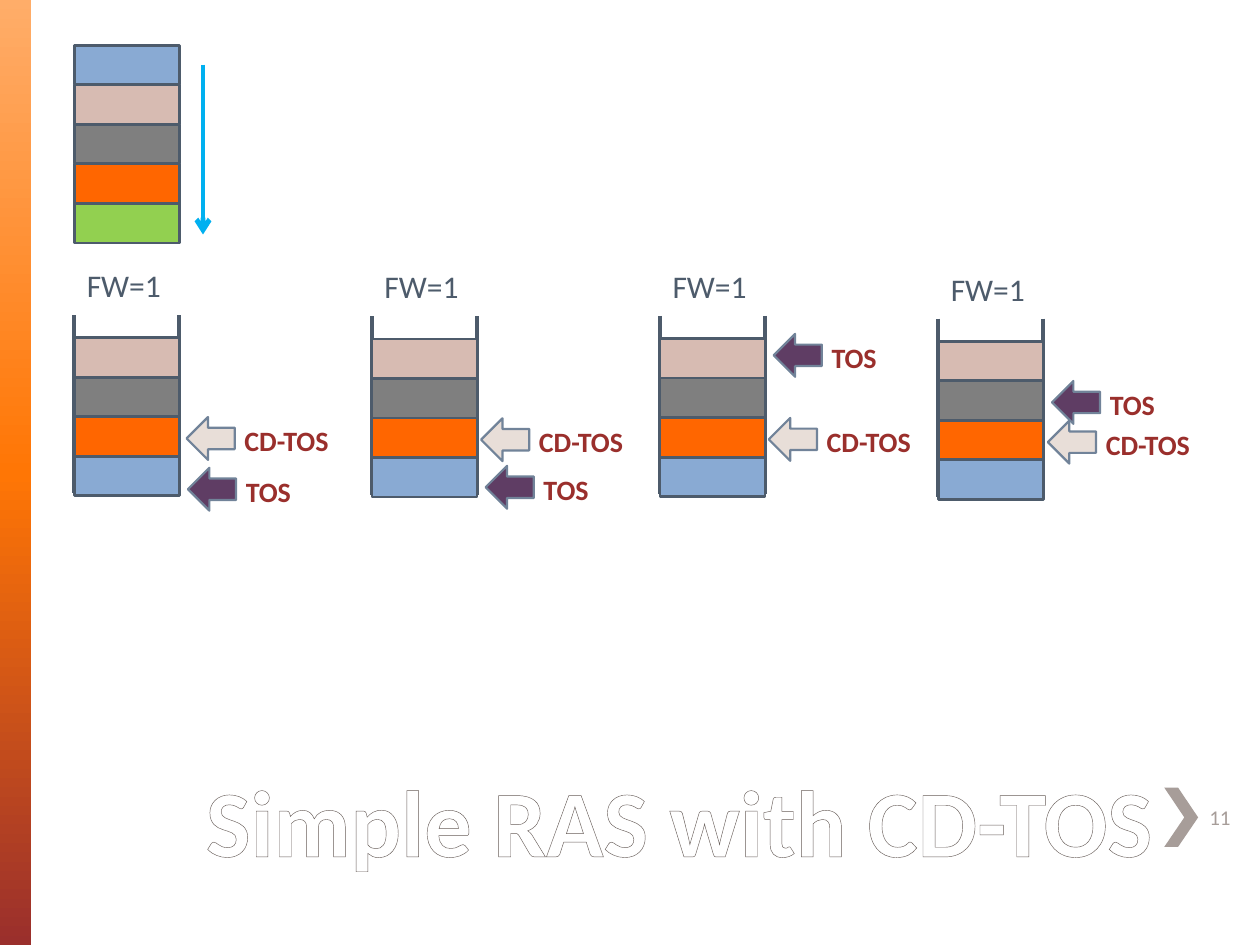
from lxml import etree
from pptx import Presentation
from pptx import util as u
from pptx.dml.color import RGBColor
from pptx.enum import shapes, text
from pptx.oxml.ns import qn

Pt = u.Pt
HUE = {
    "blue": "89AAD3", "pink": "D7BBB2", "gray": "7F7F7F", "orange": "FF6600",
    "green": "92D050", "edge": "4D5B6B", "plum": "5F3D64", "sand": "E8DED8",
    "rim": "718399", "red": "9A2F2C", "sky": "00B0F0", "taupe": "A79D99",
    "white": "FFFFFF", "trim": "675D59",
}
KIND = shapes.MSO_SHAPE
WIDE, HIGH, STEP = 60, 22.5, 22.6

deck = Presentation()
deck.slide_width, deck.slide_height = Pt(720), Pt(540)
slide = deck.slides.add_slide(deck.slide_layouts[6])
parts = slide.shapes


def write(words, x, y, w, h, size=16, hue="red", bold=False, wrap=False,
          align=text.PP_ALIGN.LEFT, anchor=text.MSO_ANCHOR.TOP):
    """Add a text box and return its run."""
    frame = parts.add_textbox(Pt(x), Pt(y), Pt(w), Pt(h)).text_frame
    frame.word_wrap, frame.vertical_anchor = wrap, anchor
    para = frame.paragraphs[0]
    para.alignment = align
    run = para.add_run()
    run.text = words
    run.font.name, run.font.size, run.font.bold = "Calibri", Pt(size), bold
    run.font.color.rgb = RGBColor.from_string(HUE[hue])
    return run


def paint(item, line, width, fill=None):
    """Colour a shape or line and take its shadow off."""
    if fill:
        item.fill.solid()
        item.fill.fore_color.rgb = RGBColor.from_string(HUE[fill])
    item.line.color.rgb = RGBColor.from_string(HUE[line])
    item.line.width = Pt(width)
    etree.SubElement(item._element.spPr, qn("a:effectLst"))


# Side bar
bar = parts.add_shape(KIND.RECTANGLE, 0, 0, Pt(18), Pt(540))
bar.shadow.inherit = False
bar.line.fill.background()
bar.fill.gradient()
bar.fill.gradient_angle = 270
stops = bar._element.spPr.find(".//" + qn("a:gsLst"))
for stop in list(stops):
    stops.remove(stop)
for place, shade in ((0, "FFAD69"), (50, "FF7605"), (100, "9A2F2C")):
    stop = etree.SubElement(stops, qn("a:gs"), pos=str(place * 1000))
    etree.SubElement(stop, qn("a:srgbClr"), val=shade)

# Chevron beside the title
pen = parts.build_freeform(Pt(673.2), Pt(450), scale=1.0)
pen.add_line_segments([(Pt(x), Pt(y)) for x, y in (
    (665.3, 450), (676.8, 467.1), (665.3, 484), (673.2, 484), (684.7, 467.1))])
mark = pen.convert_to_shape()
mark.shadow.inherit = False
mark.fill.solid()
mark.fill.fore_color.rgb = RGBColor.from_string(HUE["taupe"])
mark.line.fill.background()

# Call order
for row, hue in enumerate(("blue", "pink", "gray", "orange", "green")):
    cell = parts.add_shape(KIND.RECTANGLE, Pt(42.5), Pt(25.9 + row * STEP),
                           Pt(WIDE), Pt(HIGH))
    paint(cell, "edge", 1.5, hue)
flow = parts.add_connector(shapes.MSO_CONNECTOR.STRAIGHT,
                           Pt(116), Pt(37), Pt(116), Pt(134))
paint(flow, "sky", 2.75)
etree.SubElement(flow.line._get_or_add_ln(), qn("a:tailEnd"), type="arrow")

# Stacks: left, top of first cell, TOS arrow top, CD-TOS arrow offset
for left, top, tos, gap in ((42.5, 193, 267.3, 64.1), (212.6, 193.7, 266.2, 62.3),
                            (377.2, 193.5, 190.8, 62.1), (536.2, 195.1, 217.7, 62.6)):
    write("FW=1", left, top - 44.4, 71, 29, size=18, hue="edge", wrap=True)
    for side in (left, left + WIDE):
        wall = parts.add_connector(shapes.MSO_CONNECTOR.STRAIGHT, Pt(side),
                                   Pt(top - 13), Pt(side), Pt(top + 89))
        paint(wall, "edge", 2.25)
    for row, hue in enumerate(("pink", "gray", "orange", "blue")):
        cell = parts.add_shape(KIND.RECTANGLE, Pt(left), Pt(top + row * STEP),
                               Pt(WIDE), Pt(HIGH))
        paint(cell, "edge", 1.5, hue)
    for words, hue, x, y, w in (("TOS", "plum", 64.9, tos, 45),
                                ("CD-TOS", "sand", gap, top + 45.3, 65)):
        arrow = parts.add_shape(KIND.RIGHT_ARROW, Pt(left + x), Pt(y),
                                Pt(27.5), Pt(24.5))
        arrow.rotation = 180
        paint(arrow, "rim", 1.25, hue)
        write(words, left + x + 26, y + 0.3, w, 26.6, bold=True)

# Title and page number
title = write("Simple RAS with CD-TOS", 96, 414, 570, 90, size=54, hue="white",
              bold=True, wrap=True, align=text.PP_ALIGN.RIGHT,
              anchor=text.MSO_ANCHOR.BOTTOM)
rim = etree.Element(qn("a:ln"), w=str(Pt(1)))
etree.SubElement(etree.SubElement(rim, qn("a:solidFill")),
                 qn("a:srgbClr"), val=HUE["trim"])
title.font._element.insert(0, rim)
write("11", 684, 452.5, 30, 29, size=12, hue="taupe", wrap=True,
      anchor=text.MSO_ANCHOR.MIDDLE)

deck.save("out.pptx")
